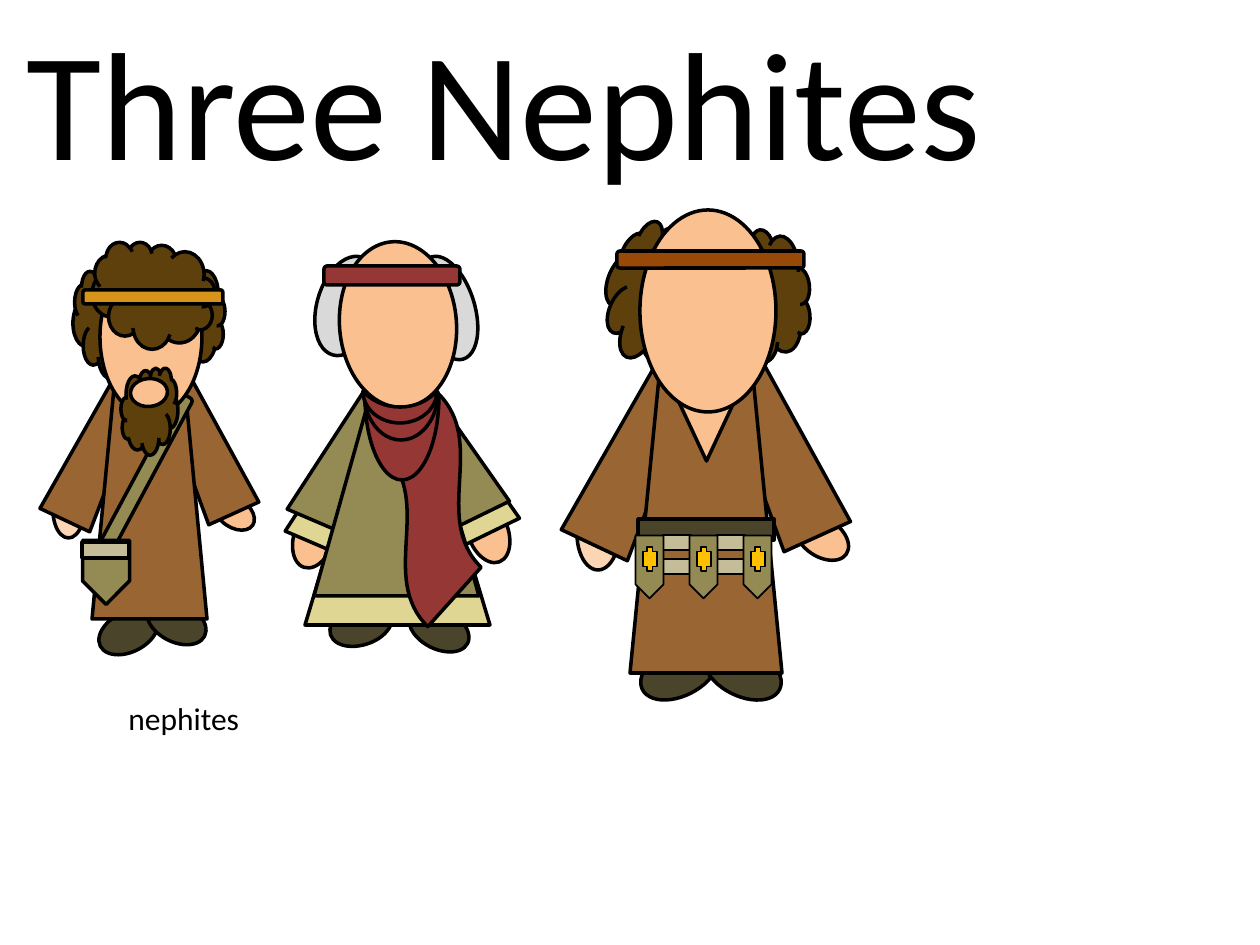
from dataclasses import dataclass

from pptx import Presentation
from pptx.dml.color import RGBColor
from pptx.enum.shapes import MSO_SHAPE
from pptx.enum.text import PP_ALIGN
from pptx.util import Emu, Pt

PX = 914400 // 126  # EMU in one px

ELLIPSE = MSO_SHAPE.OVAL
CLOUD = MSO_SHAPE.CLOUD
RECT = MSO_SHAPE.RECTANGLE
ROUND = MSO_SHAPE.ROUNDED_RECTANGLE
ROBE = MSO_SHAPE.FLOWCHART_MANUAL_OPERATION
COLLAR = MSO_SHAPE.FLOWCHART_EXTRACT
TRAPEZOID = MSO_SHAPE.TRAPEZOID
POUCH = MSO_SHAPE.PENTAGON
PLUS = MSO_SHAPE.CROSS
MOON = MSO_SHAPE.MOON
WAVE = MSO_SHAPE.WAVE
CENTER = PP_ALIGN.CENTER

BLACK = RGBColor(0x00, 0x00, 0x00)
WHITE = RGBColor(0xFF, 0xFF, 0xFF)
SKIN = RGBColor(0xFA, 0xC0, 0x90)
PALE_SKIN = RGBColor(0xFC, 0xD5, 0xB5)
BROWN = RGBColor(0x99, 0x66, 0x33)
HAIR = RGBColor(0x5D, 0x40, 0x0B)
GRAY_HAIR = RGBColor(0xD9, 0xD9, 0xD9)
SHOE = RGBColor(0x4A, 0x45, 0x2A)
OLIVE = RGBColor(0x94, 0x8A, 0x54)
TAN = RGBColor(0xC4, 0xBD, 0x97)
CREAM = RGBColor(0xDF, 0xD6, 0x93)
RED = RGBColor(0x95, 0x37, 0x35)
ORANGE = RGBColor(0xD8, 0x94, 0x1A)
RUST = RGBColor(0x98, 0x48, 0x07)
GOLD = RGBColor(0xFF, 0xC0, 0x00)

SLOPE = (0.362,)  # side slope of tunic trapezoids


@dataclass(frozen=True)
class Part:
    kind: int
    x: int
    y: int
    w: int
    h: int
    fill: RGBColor
    rot: float = 0
    flip: bool = False
    adj: tuple[float, ...] = ()
    line: int = 2


def draw_part(shapes, part: Part) -> None:
    box = (Emu(v * PX) for v in (part.x, part.y, part.w, part.h))
    sp = shapes.add_shape(part.kind, *box)
    sp.shadow.inherit = False
    sp.rotation = part.rot
    for i, value in enumerate(part.adj):
        sp.adjustments[i] = value
    if part.flip:
        sp.element.spPr.xfrm.set("flipH", "1")
    sp.fill.solid()
    sp.fill.fore_color.rgb = part.fill
    sp.line.color.rgb = BLACK
    sp.line.width = Pt(part.line)


def draw_figure(slide, parts: list[Part]) -> None:
    group = slide.shapes.add_group_shape()
    for part in parts:
        draw_part(group.shapes, part)


def add_text(slide, text: str, x: int, y: int, w: int, h: int, size: int, align=None) -> None:
    box = slide.shapes.add_textbox(*(Emu(v * PX) for v in (x, y, w, h)))
    tf = box.text_frame
    tf.word_wrap = True
    p = tf.paragraphs[0]
    p.text = text
    p.alignment = align
    p.font.name = "Calibri"
    p.font.size = Pt(size)
    p.font.color.rgb = BLACK


def belt_parts() -> list[Part]:
    pitch = 54
    straps = [Part(RECT, 663 + i * pitch, y, 28, 15, TAN, line=1)
              for i in range(2) for y in (535, 559)]
    pouches = [Part(POUCH, 618 + i * pitch, 553, 63, 28, OLIVE, 90, line=1)
               for i in range(3)]
    buckles = [Part(PLUS, 643 + i * pitch, 547, 14, 24, GOLD, adj=(0.317,), line=1)
               for i in range(3)]
    return straps + pouches + buckles


BEARDED = [
    # Hands and sleeves
    Part(ELLIPSE, 220, 491, 29, 44, SKIN, 304),
    Part(ELLIPSE, 53, 483, 31, 55, PALE_SKIN),
    Part(ROBE, 68, 383, 55, 144, BROWN, 205.2),
    Part(ROBE, 176, 373, 55, 147, BROWN, 155.6, True),
    # Side hair, shoes and robe
    Part(CLOUD, 149, 261, 76, 107, HAIR, flip=True),
    Part(CLOUD, 73, 271, 76, 107, HAIR, flip=True),
    Part(ELLIPSE, 97, 612, 63, 40, SHOE, 333.4),
    Part(ELLIPSE, 145, 602, 63, 40, SHOE, 26.8),
    Part(ROBE, 92, 377, 115, 242, BROWN, 180),
    Part(COLLAR, 122, 393, 55, 62, WHITE, 180),
    # Shoulder bag
    Part(ROUND, 131, 384, 15, 205, OLIVE, 28.2, adj=(0.249,)),
    Part(POUCH, 74, 549, 64, 47, OLIVE, 90),
    Part(RECT, 82, 542, 47, 16, TAN),
    # Head
    Part(ELLIPSE, 100, 258, 102, 158, SKIN),
    Part(CLOUD, 92, 242, 123, 107, HAIR, flip=True),
    Part(ROUND, 83, 290, 140, 14, ORANGE),
    Part(CLOUD, 121, 368, 57, 87, HAIR),
    Part(ELLIPSE, 135, 374, 28, 37, SKIN, 265.7),
]

SCARFED = [
    # Hands and shoes
    Part(ELLIPSE, 282, 517, 64, 40, SKIN, 108.4),
    Part(ELLIPSE, 456, 512, 64, 40, SKIN, 69.1),
    Part(ELLIPSE, 329, 605, 64, 40, SHOE, 341.9),
    Part(ELLIPSE, 407, 609, 64, 40, SHOE, 26.8),
    # Sleeves and tunic, each with a cream hem
    Part(TRAPEZOID, 310, 410, 67, 140, CREAM, 23.2, adj=SLOPE),
    Part(TRAPEZOID, 430, 399, 62, 140, CREAM, 334, adj=SLOPE),
    Part(TRAPEZOID, 420, 382, 62, 140, OLIVE, 334, adj=SLOPE),
    Part(TRAPEZOID, 312, 388, 67, 140, OLIVE, 23.2, adj=SLOPE),
    Part(TRAPEZOID, 305, 402, 185, 223, CREAM, adj=SLOPE),
    Part(TRAPEZOID, 314, 383, 165, 213, OLIVE, adj=SLOPE),
    # Head
    Part(ELLIPSE, 296, 276, 102, 60, GRAY_HAIR, 106.4),
    Part(ELLIPSE, 394, 281, 107, 54, GRAY_HAIR, 72.7),
    Part(ELLIPSE, 315, 266, 166, 117, SKIN, 265.7),
    Part(ROUND, 324, 266, 136, 19, RED),
    # Scarf
    Part(WAVE, 321, 466, 224, 88, RED, 256.1, adj=(0.125, 0.1)),
    Part(MOON, 360, 401, 84, 74, RED, 270),
    Part(MOON, 377, 379, 48, 74, RED, 270),
    Part(MOON, 384, 370, 32, 74, RED, 270),
]

BELTED = [
    # Hands and sleeves
    Part(ELLIPSE, 803, 508, 38, 59, SKIN, 304),
    Part(ELLIPSE, 577, 498, 42, 72, PALE_SKIN),
    Part(ROBE, 597, 370, 73, 184, BROWN, 205.2),
    Part(ROBE, 742, 357, 73, 188, BROWN, 155.6, True),
    # Side hair, shoes and robe
    Part(CLOUD, 709, 226, 101, 136, HAIR, 354.5, True),
    Part(CLOUD, 605, 227, 101, 136, HAIR, 24, True),
    Part(ELLIPSE, 638, 646, 83, 50, SHOE, 333.4),
    Part(ELLIPSE, 701, 646, 83, 50, SHOE, 26.8),
    Part(ROBE, 630, 363, 152, 310, BROWN, 180),
    Part(COLLAR, 670, 383, 73, 78, SKIN, 180),
    # Head and belt
    Part(ELLIPSE, 640, 210, 136, 202, SKIN),
    Part(ROUND, 617, 251, 187, 17, RUST),
    Part(RECT, 638, 519, 136, 21, SHOE),
    *belt_parts(),
]


def main() -> None:
    prs = Presentation()
    prs.slide_width, prs.slide_height = Emu(1260 * PX), Emu(945 * PX)
    slide = prs.slides.add_slide(prs.slide_layouts[6])

    draw_figure(slide, BEARDED)
    draw_figure(slide, SCARFED)
    add_text(slide, "nephites", 116, 693, 168, 50, 18)
    draw_figure(slide, BELTED)
    add_text(slide, "Three Nephites", 0, 0, 1008, 199, 88, CENTER)

    prs.save("out.pptx")


if __name__ == "__main__":
    main()
